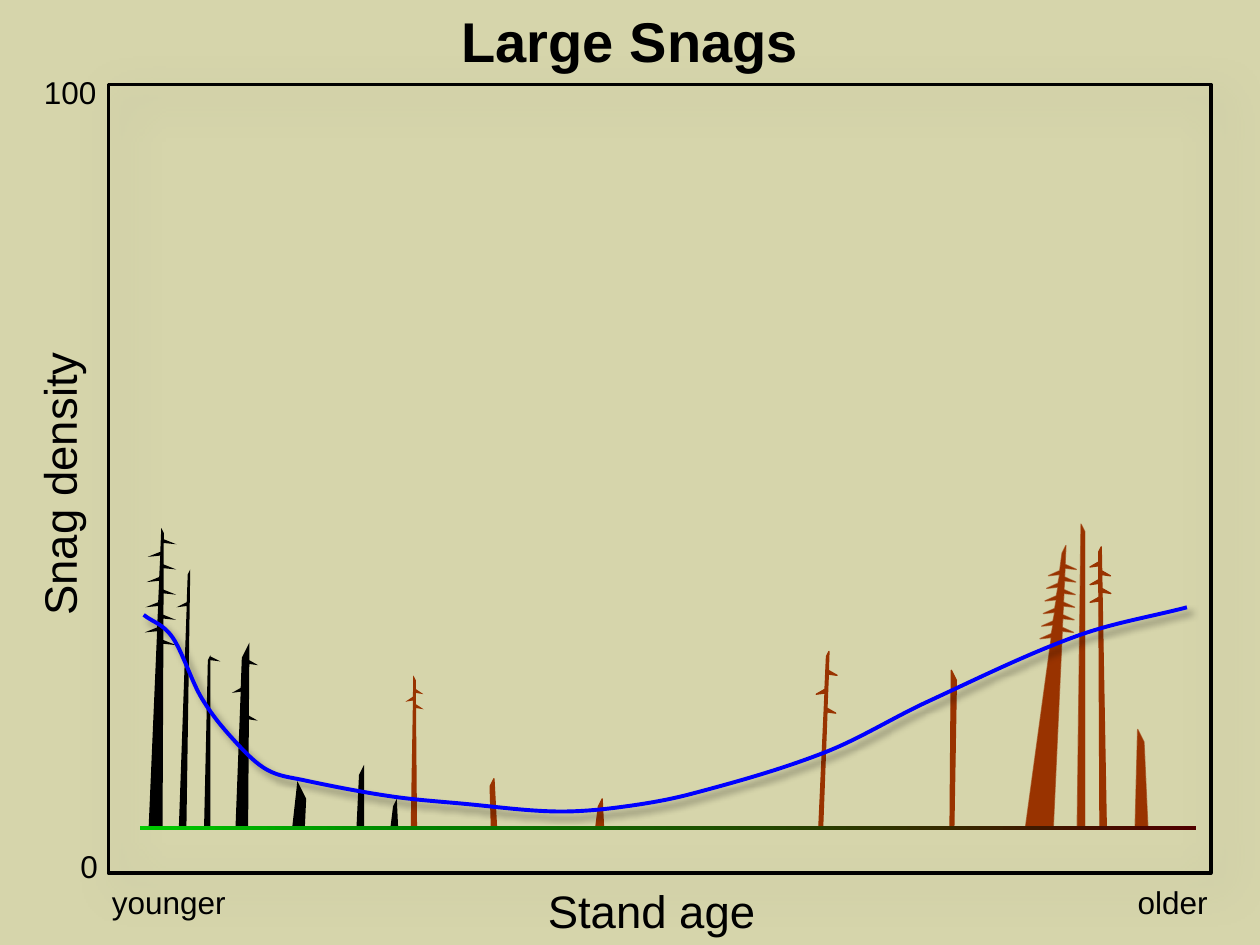
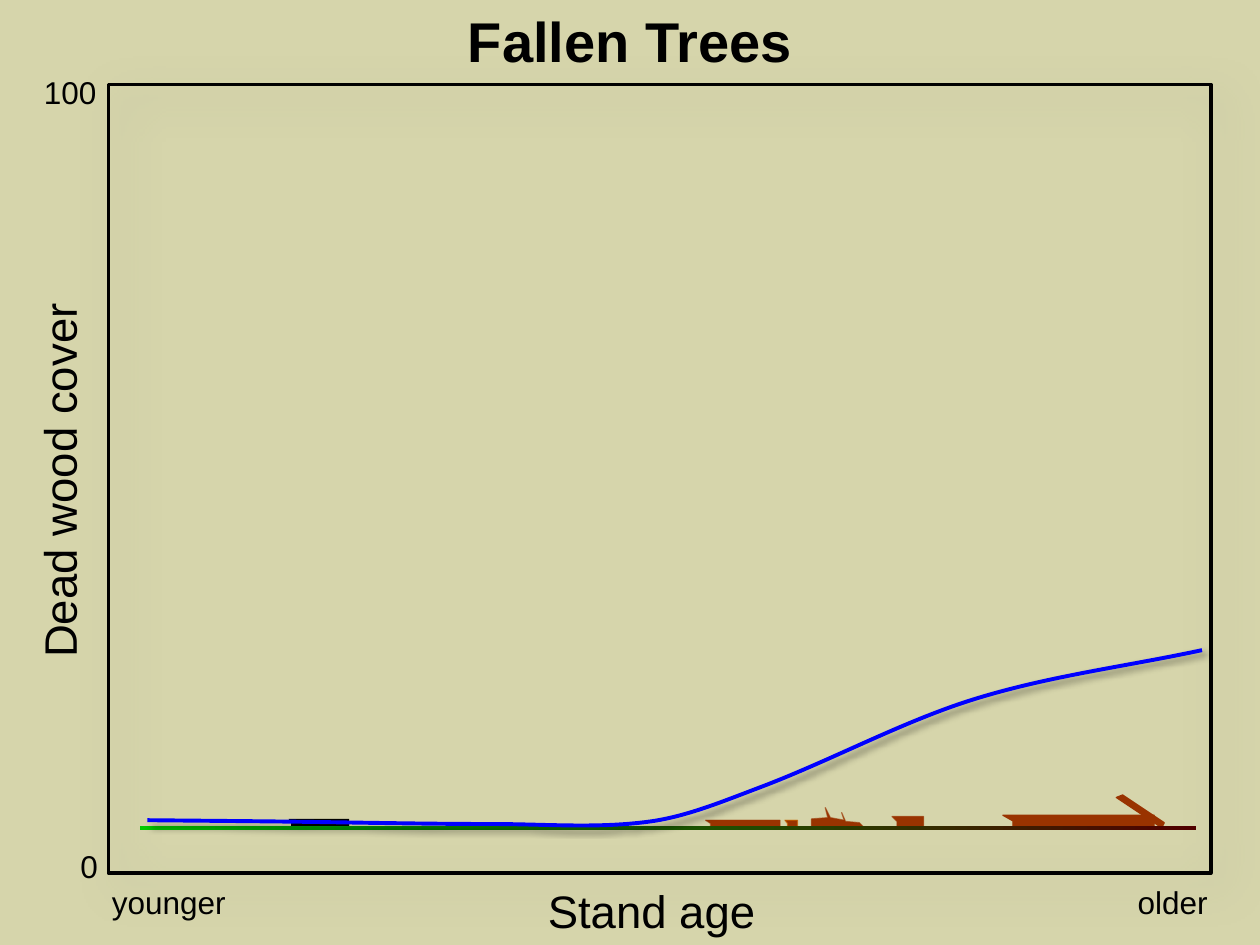
import copy

import lxml.etree
import pptx
import pptx.dml.color
import pptx.enum.shapes
import pptx.enum.text
import pptx.oxml.ns
import pptx.util

Inches = pptx.util.Inches
Pt = pptx.util.Pt
qn = pptx.oxml.ns.qn

COLORS = {
    "sand": "D6D5AB", "ink": "000000", "bark": "993300", "rust": "CC6600",
    "curve": "0000FF", "haze": "808080",
    "young": "00CC00", "mid": "008000", "old": "500000",
}

# Wood looks: fill, edge, edge opacity in percent
LOOKS = {
    "dead": ("bark", "bark", 100), "worn": ("bark", "bark", 60),
    "rusty": ("bark", "rust", 60), "bare": ("bark", None, 100),
    "burnt": ("ink", None, 100),
}
BASE = 6.56

# Snags: look, foot left and right, apex x, shoulder x, top,
# then for twigs: first y, gap, count, reach (negative starts on the left)
SNAGS = [
    ("dead", 3.9, 3.94, 3.92, 3.89, 6.18),
    ("dead", 4.73, 4.79, 4.78, 4.75, 6.34),
    ("dead", 7.54, 7.57, 7.55, 7.59, 5.32),
    ("worn", 8.55, 8.61, 8.58, 8.61, 4.16),
    ("dead", 8.73, 8.78, 8.74, 8.72, 4.34, 4.46, 0.07, 5, -0.07),
    ("dead", 6.5, 6.53, 6.58, 6.56, 5.17, 5.32, 0.15, 3, 0.07),
    ("worn", 8.14, 8.36, 8.46, 8.43, 4.33, 4.48, 0.05, 12, 0.09),
    ("worn", 9.01, 9.11, 9.03, 9.08, 5.79),
    ("burnt", 2.83, 2.89, 2.89, 2.85, 6.07),
    ("burnt", 1.18, 1.29, 1.28, 1.3, 4.19, 4.28, 0.1, 9, 0.1),
    ("burnt", 1.62, 1.67, 1.67, 1.65, 5.2, 5.21, 0, 1, 0.08),
    ("burnt", 1.87, 1.97, 1.98, 1.92, 5.1, 5.24, 0.22, 3, 0.07),
    ("burnt", 2.32, 2.42, 2.36, 2.43, 6.2),
    ("burnt", 3.1, 3.16, 3.15, 3.12, 6.34),
    ("burnt", 1.42, 1.48, 1.51, 1.49, 4.52, 4.78, 0, 1, -0.08),
    ("bare", 3.26, 3.31, 3.28, 3.3, 5.36, 5.47, 0.06, 3, 0.06),
]

# Fallen logs: look, left, right, top, depth of the split left end
LOGS = [
    ("dead", 7.96, 9.16, 6.47, 0.08),
    ("worn", 5.6, 6.19, 6.51, 0.04),
    ("rusty", 6.23, 6.33, 6.51, 0.02),
    ("worn", 7.08, 7.33, 6.48, 0.04),
    ("burnt", 2.29, 2.77, 6.5, 0.02),
]
LEAN = [(8.86, 6.33), (8.91, 6.31), (9.24, 6.53), (9.22, 6.57)]
STUMP = [(6.44, 6.5), (6.44, BASE), (6.85, BASE), (6.82, 6.53), (6.71, 6.52),
         (6.68, 6.45), (6.7, 6.51), (6.59, 6.49), (6.55, 6.41), (6.57, 6.49)]

# Trend knots, joined by a smooth curve
SNAG_TREND = [
    (1.14, 4.88), (1.37, 5.06), (1.6, 5.54), (1.88, 5.9), (2.12, 6.11),
    (2.4, 6.19), (3.1, 6.32), (3.69, 6.38), (4.39, 6.44), (4.89, 6.41),
    (5.49, 6.3), (6.55, 5.97), (7.36, 5.57), (8.54, 5.05), (9.42, 4.82)]
WOOD_TREND = [
    (1.17, 6.51), (2.2, 6.52), (3.91, 6.54), (5.16, 6.52), (6.03, 6.25),
    (7.73, 5.55), (9.54, 5.16)]

# Labels: text, left, top, width, height, size
LABELS = [
    ("Stand age", 4.25, 6.96, 1.87, 0.54, 26),
    ("younger", 0.79, 6.96, 1.11, 0.4, 18),
    ("older", 8.93, 6.96, 0.76, 0.4, 18),
    ("100", 0.25, 0.53, 0.62, 0.4, 18),
    ("0", 0.54, 6.67, 0.34, 0.4, 18),
]


def rgb(name):
    return pptx.dml.color.RGBColor.from_string(COLORS[name])


def side(foot, head, peak, twigs, reach):
    """One side of a trunk, from the foot up, with its twigs."""
    points = [(foot, BASE)]
    for y in reversed(twigs):
        x = foot + (head - foot) * (BASE - y) / (BASE - peak)
        points += [(x, y + 0.03), (x + reach, y + 0.04), (x, y)]
    return points + [(head, peak)]


def snag(left, right, apex, edge, top, start=0, gap=0, count=0, reach=0):
    low = top + 2 * abs(apex - edge)
    (lx, ly), (rx, ry) = sorted([(apex, top), (edge, low)])
    twigs = [start + gap * i for i in range(count)]
    first = int(reach < 0)
    reach = abs(reach)
    east = side(right, rx, ry, twigs[first::2], reach)
    west = side(left, lx, ly, twigs[1 - first::2], -reach)
    return east + west[::-1]


def log(left, right, top, split):
    inner = left + split
    return [(left, top), (inner, (top + BASE) / 2), (inner, BASE),
            (right, BASE), (right, top)]


def smooth(knots):
    """Add two control points between each pair of knots."""
    last = len(knots) - 1
    slopes = []
    for i in range(last + 1):
        (ax, ay), (bx, by) = knots[max(i - 1, 0)], knots[min(i + 1, last)]
        slopes.append((by - ay) / (bx - ax))
    points = [knots[0]]
    for i in range(last):
        (ax, ay), (bx, by) = knots[i], knots[i + 1]
        step = (bx - ax) / 3
        points += [(ax + step, ay + step * slopes[i]),
                   (bx - step, by - step * slopes[i + 1]), (bx, by)]
    return points


class Deck:
    def __init__(self):
        self.prs = pptx.Presentation()
        self.prs.slide_width, self.prs.slide_height = Inches(10), Inches(7.5)
        back = self.prs.slide_master.background.fill
        back.solid()
        back.fore_color.rgb = rgb("sand")
        self.font = {"name": "Arial", "bold": False}

    def page(self):
        self.slide = self.prs.slides.add_slide(self.prs.slide_layouts[6])

    def top(self):
        self.shapes = self.slide.shapes

    def group(self):
        self.shapes = self.slide.shapes.add_group_shape().shapes

    def paint(self, shape, fill=None, edge=None, alpha=100, width=0.75):
        shape.shadow.inherit = False
        if fill:
            shape.fill.solid()
            shape.fill.fore_color.rgb = rgb(fill)
        else:
            shape.fill.background()
        if not edge:
            shape.line.fill.background()
            return
        shape.line.color.rgb = rgb(edge)
        shape.line.width = Pt(width)
        if alpha < 100:
            tint = shape._element.spPr.find(qn("a:ln")).find(".//" + qn("a:srgbClr"))
            lxml.etree.SubElement(tint, qn("a:alpha"), val=str(alpha * 1000))

    def shade(self, shape, color, blur, dist):
        effects = shape._element.spPr.find(qn("a:effectLst"))
        outer = lxml.etree.SubElement(
            effects, qn("a:outerShdw"), blurRad=str(Pt(blur)), dist=str(Pt(dist)),
            dir=str(45 * 60000), algn="tl", rotWithShape="0")
        tint = lxml.etree.SubElement(outer, qn("a:srgbClr"), val=COLORS[color])
        lxml.etree.SubElement(tint, qn("a:alpha"), val="40000")

    def outline(self, points, close=True):
        points = [(Inches(x), Inches(y)) for x, y in points]
        form = self.shapes.build_freeform(*points[0])
        form.add_line_segments(points[1:], close=close)
        return form.convert_to_shape()

    def wood(self, look, points):
        self.paint(self.outline(points), *LOOKS[look])

    def curve(self, knots):
        shape = self.outline(smooth(knots), close=False)
        trace = shape._element.find(".//" + qn("a:path"))
        lines = trace.findall(qn("a:lnTo"))
        for i in range(0, len(lines), 3):
            bend = lxml.etree.SubElement(trace, qn("a:cubicBezTo"))
            for line in lines[i:i + 3]:
                bend.append(line[0])
                trace.remove(line)
        self.paint(shape, edge="curve", width=2.25)
        self.shade(shape, "ink", 4, 3)

    def box(self, left, top, width, height):
        kind = pptx.enum.shapes.MSO_SHAPE.RECTANGLE
        return self.shapes.add_shape(
            kind, Inches(left), Inches(top), Inches(width), Inches(height))

    def ground(self):
        strip = self.box(1.11, BASE, 8.38, 0.03)
        self.paint(strip)
        strip.fill.gradient()
        strip.fill.gradient_angle = 0
        stops = strip._element.spPr.find(".//" + qn("a:gsLst"))
        stops.append(copy.deepcopy(stops[0]))
        ramp = [("young", 0), ("mid", 0.27), ("old", 1)]
        for stop, (color, place) in zip(strip.fill.gradient_stops, ramp):
            stop.color.rgb = rgb(color)
            stop.position = place

    def frame(self):
        border = self.box(0.86, 0.67, 8.75, 6.26)
        self.paint(border, edge="ink", width=2)
        self.shade(border, "haze", 25, 10)

    def text(self, words, left, top, width, height, size, turn=0, wrap=False, **look):
        box = self.shapes.add_textbox(
            Inches(left), Inches(top), Inches(width), Inches(height))
        box.rotation = turn
        frame = box.text_frame
        frame.word_wrap = wrap
        frame.auto_size = pptx.enum.text.MSO_AUTO_SIZE.SHAPE_TO_FIT_TEXT
        para = frame.paragraphs[0]
        run = para.add_run()
        run.text = words
        for key, value in {**self.font, "size": Pt(size), **look}.items():
            setattr(run.font, key, value)
        run.font.color.rgb = rgb("ink")
        return para

    def title(self, words):
        para = self.text(words, 0, 0, 10, 0.64, 32, wrap=True, bold=True)
        para.alignment = pptx.enum.text.PP_ALIGN.CENTER

    def graph(self, title, axis, width, trees, trend):
        self.page()
        # Trees on the ground strip
        self.group()
        for look, points in trees:
            self.wood(look, points)
        self.ground()
        # Frame and axis labels
        self.group()
        self.frame()
        self.text(axis, 0.47 - width / 2, 3.53, width, 0.54, 26, turn=270)
        for label in LABELS:
            self.text(*label)
        # Trend and title
        self.top()
        self.curve(trend)
        self.title(title)


def main():
    deck = Deck()
    snags = [(look, snag(*sizes)) for look, *sizes in SNAGS]
    logs = [(look, log(*sizes)) for look, *sizes in LOGS]
    logs += [("dead", LEAN), ("worn", STUMP)]
    deck.graph("Large Snags", "Snag density", 2.37, snags, SNAG_TREND)
    deck.graph("Fallen Trees", "Dead wood cover", 3.04, logs, WOOD_TREND)
    deck.prs.save("out.pptx")


if __name__ == "__main__":
    main()
